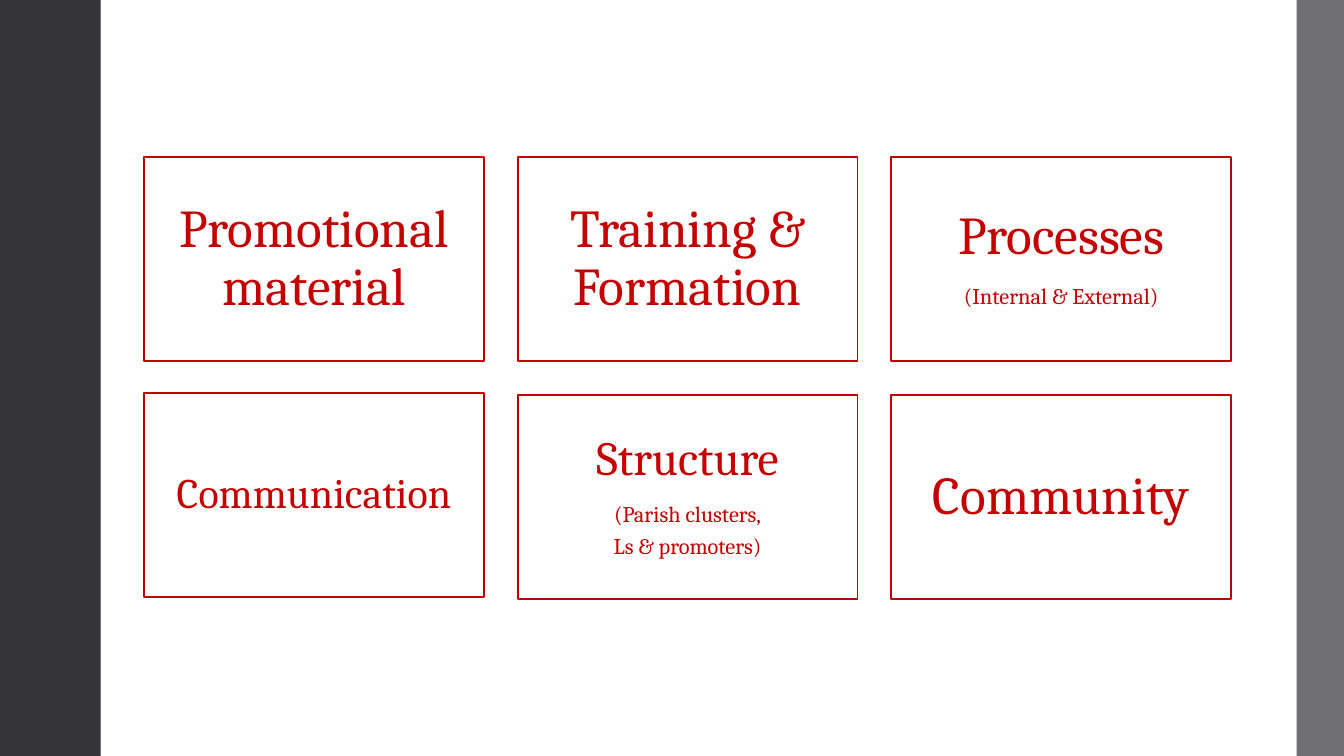
from pptx import Presentation
from pptx.dml.color import RGBColor
from pptx.enum.shapes import MSO_SHAPE
from pptx.enum.text import MSO_ANCHOR, PP_ALIGN
from pptx.util import Inches, Pt

RECT = MSO_SHAPE.RECTANGLE
MIDDLE = MSO_ANCHOR.MIDDLE
CENTER = PP_ALIGN.CENTER

WHITE = RGBColor(0xFF, 0xFF, 0xFF)
DARK = RGBColor(0x35, 0x35, 0x37)
GREY = RGBColor(0x6F, 0x6F, 0x74)
RED = RGBColor(0xC4, 0x00, 0x00)
DEEP = RGBColor(0xC0, 0x00, 0x00)

prs = Presentation()
prs.slide_width = Inches(13.33)
prs.slide_height = Inches(7.5)
slide = prs.slides.add_slide(prs.slide_layouts[6])


def add_rect(left, top, width, height, fill, line=None):
    rect = slide.shapes.add_shape(
        RECT, Inches(left), Inches(top), Inches(width), Inches(height))
    rect.shadow.inherit = False
    rect.fill.solid()
    rect.fill.fore_color.rgb = fill
    if line is None:
        rect.line.fill.background()
    else:
        rect.line.color.rgb = line
        rect.line.width = Pt(1.35)
    return rect


# Side bars
add_rect(0, 0, 1, 7.5, DARK)
add_rect(12.86, 0, 0.47, 7.5, GREY)

# Topic cards: column, top, border, inset, lines of (text, size)
cards = [
    (0, 1.56, RED, 0.16, [("Promotional material", 38)]),
    (1, 1.56, RED, 0.16, [("Training & Formation", 38)]),
    (2, 1.56, DEEP, 0.16, [("Processes", 38), ("(Internal & External)", 16)]),
    (0, 3.9, DEEP, 0.12, [("Communication", 30)]),
    (1, 3.92, DEEP, 0.14, [("Structure", 34), ("(Parish clusters,", 16),
                           ("Ls & promoters)", 16)]),
    (2, 3.92, DEEP, 0.16, [("Community", 38)]),
]
for col, top, border, inset, lines in cards:
    card = add_rect(1.43 + col * 3.705, top, 3.37, 2.02, WHITE, border)
    frame = card.text_frame
    frame.word_wrap = True
    frame.vertical_anchor = MIDDLE
    frame.margin_left = frame.margin_right = Inches(inset)
    frame.margin_top = frame.margin_bottom = Inches(inset)
    for i, (text, size) in enumerate(lines):
        para = frame.add_paragraph() if i else frame.paragraphs[0]
        para.text = text
        para.alignment = CENTER
        para.line_spacing = 0.9
        para.space_after = Pt(0.35 * size)
        para.font.name = "Cambria"
        para.font.size = Pt(size)
        para.font.color.rgb = RED

prs.save("out.pptx")
